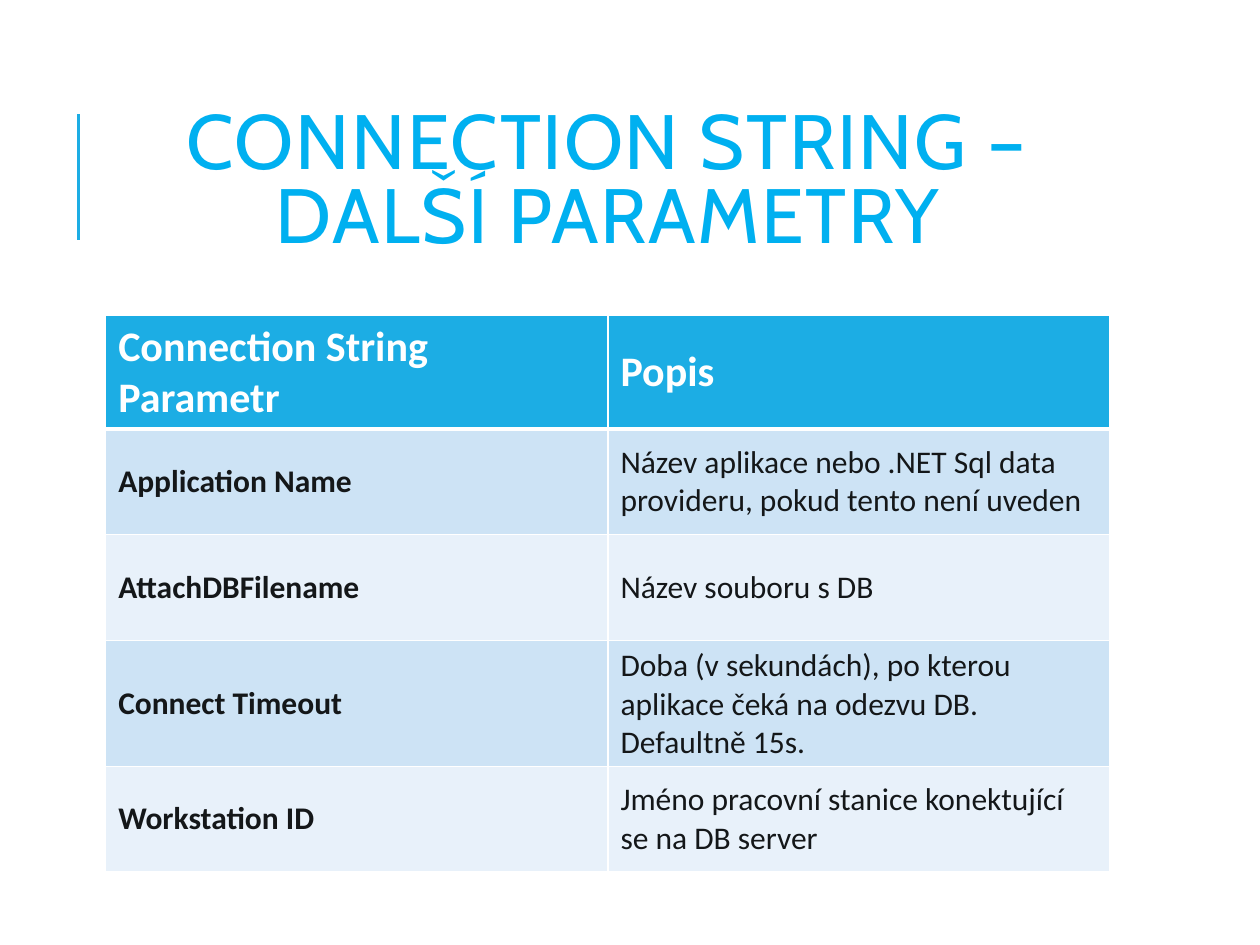
from dataclasses import dataclass

from lxml.etree import SubElement
from pptx import Presentation
from pptx.dml.color import RGBColor
from pptx.enum.shapes import MSO_CONNECTOR
from pptx.enum.text import MSO_ANCHOR, PP_ALIGN
from pptx.oxml.ns import qn
from pptx.util import Cm, Pt


@dataclass(frozen=True)
class Theme:
    title_font: str = "Cabin"
    body_font: str = "Calibri"
    title_size: int = 44
    header_size: int = 24
    body_size: int = 18
    title: str = "00B0F0"
    accent: str = "1CADE4"
    white: str = "FFFFFF"
    text: str = "141719"
    bands: tuple = ("CDE3F5", "E8F1FA")


THEME = Theme()
LEFT, WIDTH = Cm(2.13), Cm(20.25)
ROWS = [
    ("Connection String Parametr", "Popis"),
    ("Application Name",
     "Název aplikace nebo .NET Sql data provideru, pokud tento není uveden"),
    ("AttachDBFilename", "Název souboru s DB"),
    ("Connect Timeout",
     "Doba (v sekundách), po kterou aplikace čeká na odezvu DB. Defaultně 15s."),
    ("Workstation ID", "Jméno pracovní stanice konektující se na DB server"),
]


def write(tf, text, *, size, color, font=THEME.body_font, bold=False,
          align=PP_ALIGN.LEFT, line_spacing=None, tracking=None):
    tf.word_wrap = True
    p = tf.paragraphs[0]
    p.alignment = align
    if line_spacing:
        p.line_spacing = line_spacing
    r = p.add_run()
    r.text = text
    r.font.name = font
    r.font.size = Pt(size)
    r.font.bold = bold
    r.font.color.rgb = RGBColor.from_string(color)
    if tracking:
        r._r.get_or_add_rPr().set("spc", str(tracking * 100))


def add_title(s, text):
    sp = s.shapes.add_textbox(LEFT, Cm(1.63), WIDTH, Cm(4.17))
    sp.text_frame.vertical_anchor = MSO_ANCHOR.MIDDLE
    write(sp.text_frame, text, size=THEME.title_size, color=THEME.title,
          font=THEME.title_font, align=PP_ALIGN.CENTER,
          line_spacing=0.8, tracking=1)


def add_rule(s, x, top, bottom):
    line = s.shapes.add_connector(MSO_CONNECTOR.STRAIGHT, x, bottom, x, top)
    line.line.color.rgb = RGBColor.from_string(THEME.accent)
    line.line.width = Pt(1.5)
    SubElement(line._element.spPr, qn("a:effectLst"))


def set_borders(cell, **widths):
    tc_pr = cell._tc.get_or_add_tcPr()
    for side, width in widths.items():
        ln = SubElement(tc_pr, qn(f"a:ln{side}"), w=str(Pt(width)))
        fill = SubElement(ln, qn("a:solidFill"))
        SubElement(fill, qn("a:srgbClr"), val=THEME.white)


def add_table(s, rows):
    row_height = Cm(2.13)
    table = s.shapes.add_table(len(rows), len(rows[0]), LEFT, Cm(6.36),
                               WIDTH, row_height * len(rows)).table
    for i, row in enumerate(rows):
        header = i == 0
        table.rows[i].height = row_height
        for j, text in enumerate(row):
            cell = table.cell(i, j)
            cell.vertical_anchor = MSO_ANCHOR.MIDDLE
            # The rule under the header is heavier than the rest
            set_borders(cell, L=1, R=1, T=3 if i == 1 else 1,
                        B=3 if header else 1)
            cell.fill.solid()
            cell.fill.fore_color.rgb = RGBColor.from_string(
                THEME.accent if header else THEME.bands[(i - 1) % 2])
            write(cell.text_frame, text, bold=header or j == 0,
                  size=THEME.header_size if header else THEME.body_size,
                  color=THEME.white if header else THEME.text)


def main():
    prs = Presentation()
    prs.slide_width, prs.slide_height = Cm(25.4), Cm(19.05)
    s = prs.slides.add_slide(prs.slide_layouts[6])

    # Heading with its accent rule
    add_rule(s, Cm(1.58), Cm(2.29), Cm(4.83))
    add_title(s, "CONNECTION STRING – DALŠÍ PARAMETRY")

    # Parameter table
    add_table(s, ROWS)

    prs.save("out.pptx")


if __name__ == "__main__":
    main()
